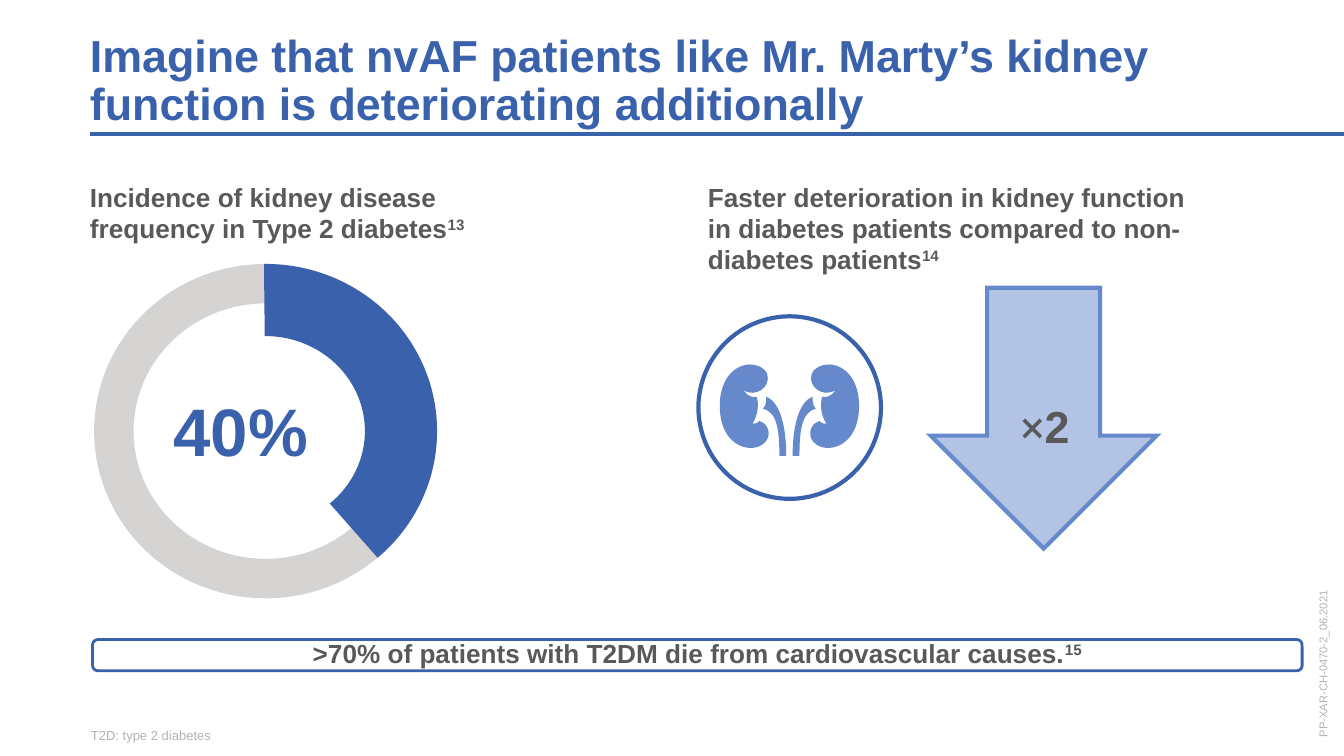
"""Build a slide on kidney function decline in patients with type 2 diabetes."""
import pptx
import pptx.util
import pptx.dml.color
import pptx.enum.shapes
import pptx.enum.text
import pptx.oxml.ns
import lxml.etree

Cm = pptx.util.Cm
Pt = pptx.util.Pt
RGB = pptx.dml.color.RGBColor
SHAPE = pptx.enum.shapes.MSO_SHAPE
ALIGN = pptx.enum.text.PP_ALIGN
ANCHOR = pptx.enum.text.MSO_ANCHOR
qn = pptx.oxml.ns.qn

BLUE = RGB(0x39, 0x61, 0xAC)
LIGHT_BLUE = RGB(0x66, 0x89, 0xCC)
DARK_GREY = RGB(0x59, 0x59, 0x59)
PALE_GREY = RGB(0xB3, 0xB2, 0xB5)
RING_GREY = RGB(0xD5, 0xD4, 0xD2)
WHITE = RGB(0xFF, 0xFF, 0xFF)

SLIDE_SIZE = (25.4, 14.29)
MARGIN = 1.7
RULE_Y = 2.54

TITLE = "Imagine that nvAF patients like Mr. Marty’s kidney function is deteriorating additionally"
INCIDENCE = "Incidence of kidney disease frequency in Type 2 diabetes"
DETERIORATION = """Faster deterioration in kidney function 
in diabetes patients compared to non-diabetes patients"""
MORTALITY = ">70% of patients with T2DM die from cardiovascular causes."

HEADINGS = [
    (TITLE, "", (MARGIN, 0.61, 23.01, 1.85),
     dict(size=24, color=BLUE, anchor=ANCHOR.BOTTOM, spacing=0.9)),
    (INCIDENCE, "13", (MARGIN, 3.42, 7.54, 1.19), dict(size=14)),
    (DETERIORATION, "14", (13.38, 3.42, 10.92, 1.8), dict(size=14)),
]
FOOTNOTE = ("T2D: type 2 diabetes", "", (1.72, 13.74, 22.99, 0.3),
            dict(size=7, color=PALE_GREY, bold=False, anchor=ANCHOR.BOTTOM))
APPROVAL_CODE = ("PP-XAR-CH-0470-2_06.2021", "", (23.22, 11.76, 3.56, 0.79),
                 dict(size=6, color=PALE_GREY, bold=False, anchor=ANCHOR.MIDDLE))
SHARE = ("40%", "", (2.67, 7.23, 3.76, 1.8),
         dict(size=36, color=BLUE, anchor=ANCHOR.MIDDLE, align=ALIGN.CENTER))

KIDNEYS_AXIS, KIDNEYS_TOP = 14.92, 6.89
KIDNEY = [
    (0.77, 0),
    (0.62, 0), (0.47, 0.05), (0.42, 0.18),
    (0.34, 0.43), (0.65, 0.64), (0.88, 0.48),
    (0.83, 0.53), (0.77, 0.64), (0.62, 0.61),
    (0.57, 0.76), (0.6, 0.97), (0.7, 1.12),
    (0.65, 1.12), (0.62, 1.12), (0.57, 1.07),
    (0.37, 1.12), (0.32, 1.4), (0.52, 1.52),
    (0.77, 1.68), (1.26, 1.52), (1.31, 0.91),
    (1.36, 0.41), (1.13, 0.03), (0.77, 0),
]
URETER = [
    (0.44, 0.61),
    (0.17, 0.71), (0.06, 1.19), (0.06, 1.73),
    (0.19, 1.73), (0.19, 1.73), (0.19, 1.73),
    (0.19, 1.3), (0.22, 0.89), (0.5, 0.84),
    (0.42, 0.76), (0.44, 0.61), (0.44, 0.61),
]


def paint(part, fill=None, line=None, width=2.25):
    part.shadow.inherit = False
    if fill is None:
        part.fill.background()
    else:
        part.fill.solid()
        part.fill.fore_color.rgb = fill
    if line is None:
        part.line.fill.background()
    else:
        part.line.color.rgb = line
        part.line.width = Pt(width)
    return part


def add_part(slide, preset, box, **colours):
    return paint(slide.shapes.add_shape(preset, *map(Cm, box)), **colours)


def style_run(run, size, color, bold, font="Arial"):
    run.font.name = font
    run.font.size = Pt(size)
    run.font.bold = bold
    run.font.color.rgb = color


def write(part, text, reference="", size=14, color=DARK_GREY, bold=True,
          anchor=ANCHOR.TOP, align=ALIGN.LEFT, spacing=None):
    frame = part.text_frame
    frame.word_wrap = True
    frame.vertical_anchor = anchor
    frame.margin_left = frame.margin_right = frame.margin_top = frame.margin_bottom = 0
    paragraph = frame.paragraphs[0]
    paragraph.text = text
    paragraph.alignment = align
    paragraph.line_spacing = spacing
    if reference:
        superscript = paragraph.add_run()
        superscript.text = reference
        superscript.font._element.set("baseline", "30000")
    for run in paragraph.runs:
        style_run(run, size, color, bold)
    return paragraph


def add_text(slide, text, reference, box, style):
    part = slide.shapes.add_textbox(*map(Cm, box))
    write(part, text, reference, **style)
    return part


def add_rule(slide):
    rule = slide.shapes.add_connector(
        pptx.enum.shapes.MSO_CONNECTOR.STRAIGHT,
        Cm(MARGIN), Cm(RULE_Y), Cm(SLIDE_SIZE[0]), Cm(RULE_Y))
    rule.line.color.rgb = BLUE
    rule.line.width = Pt(2.25)
    lxml.etree.SubElement(rule._element.spPr, qn("a:effectLst"))


def add_incidence_ring(slide):
    ring = add_part(slide, SHAPE.DONUT, (1.78, 4.99, 6.48, 6.32), fill=RING_GREY)
    ring.adjustments[0] = 0.118
    add_text(slide, *SHARE)
    arc = add_part(slide, SHAPE.BLOCK_ARC, (1.86, 4.91, 6.32, 6.48), fill=BLUE)
    arc.rotation = 90
    for i, value in enumerate((107.66, 191.11, 0.216)):
        arc.adjustments[i] = value


def add_decline_arrow(slide):
    arrow = add_part(slide, SHAPE.DOWN_ARROW, (17.59, 5.44, 4.27, 4.93),
                     fill=LIGHT_BLUE, line=LIGHT_BLUE)
    properties = arrow._element.spPr
    tint = properties.find(qn("a:solidFill"))[0]
    lxml.etree.SubElement(tint, qn("a:alpha"), val="50000")
    lxml.etree.SubElement(properties.find(qn("a:ln")), qn("a:miter"), lim="800000")
    factor = slide.shapes.add_textbox(*map(Cm, (17.4, 7.39, 4.7, 1.3)))
    paragraph = write(factor, "×", anchor=ANCHOR.MIDDLE, align=ALIGN.CENTER)
    style_run(paragraph.runs[0], 24, DARK_GREY, False, "Roboto")
    number = paragraph.add_run()
    number.text = "2"
    style_run(number, 24, DARK_GREY, True)


def bend(part):
    """Turn every three straight segments into one cubic curve."""
    segments = list(part._element.iter(qn("a:lnTo")))
    for i in range(0, len(segments), 3):
        curve = lxml.etree.Element(qn("a:cubicBezTo"))
        segments[i].addprevious(curve)
        for segment in segments[i:i + 3]:
            curve.append(segment[0])
            segment.getparent().remove(segment)


def add_kidneys(slide):
    add_part(slide, SHAPE.OVAL, (13.2, 5.98, 3.45, 3.45), fill=WHITE, line=BLUE)
    for outline in (KIDNEY, URETER):
        for side in (1, -1):
            points = [(Cm(KIDNEYS_AXIS + side * x), Cm(KIDNEYS_TOP + y))
                      for x, y in outline]
            builder = slide.shapes.build_freeform(*points[0])
            builder.add_line_segments(points[1:], close=True)
            organ = paint(builder.convert_to_shape(), fill=LIGHT_BLUE)
            bend(organ)


def main():
    deck = pptx.Presentation()
    deck.slide_width, deck.slide_height = map(Cm, SLIDE_SIZE)
    slide = deck.slides.add_slide(deck.slide_layouts[6])
    add_rule(slide)
    for heading in HEADINGS:
        add_text(slide, *heading)
    mortality = add_part(slide, SHAPE.ROUNDED_RECTANGLE, (1.75, 12.09, 22.86, 0.59),
                         line=BLUE, width=1.5)
    write(mortality, MORTALITY, "15", anchor=ANCHOR.MIDDLE, align=ALIGN.CENTER, spacing=0.9)
    add_decline_arrow(slide)
    add_kidneys(slide)
    add_text(slide, *FOOTNOTE)
    add_text(slide, *APPROVAL_CODE).rotation = 270
    add_incidence_ring(slide)
    deck.save("out.pptx")


if __name__ == "__main__":
    main()
